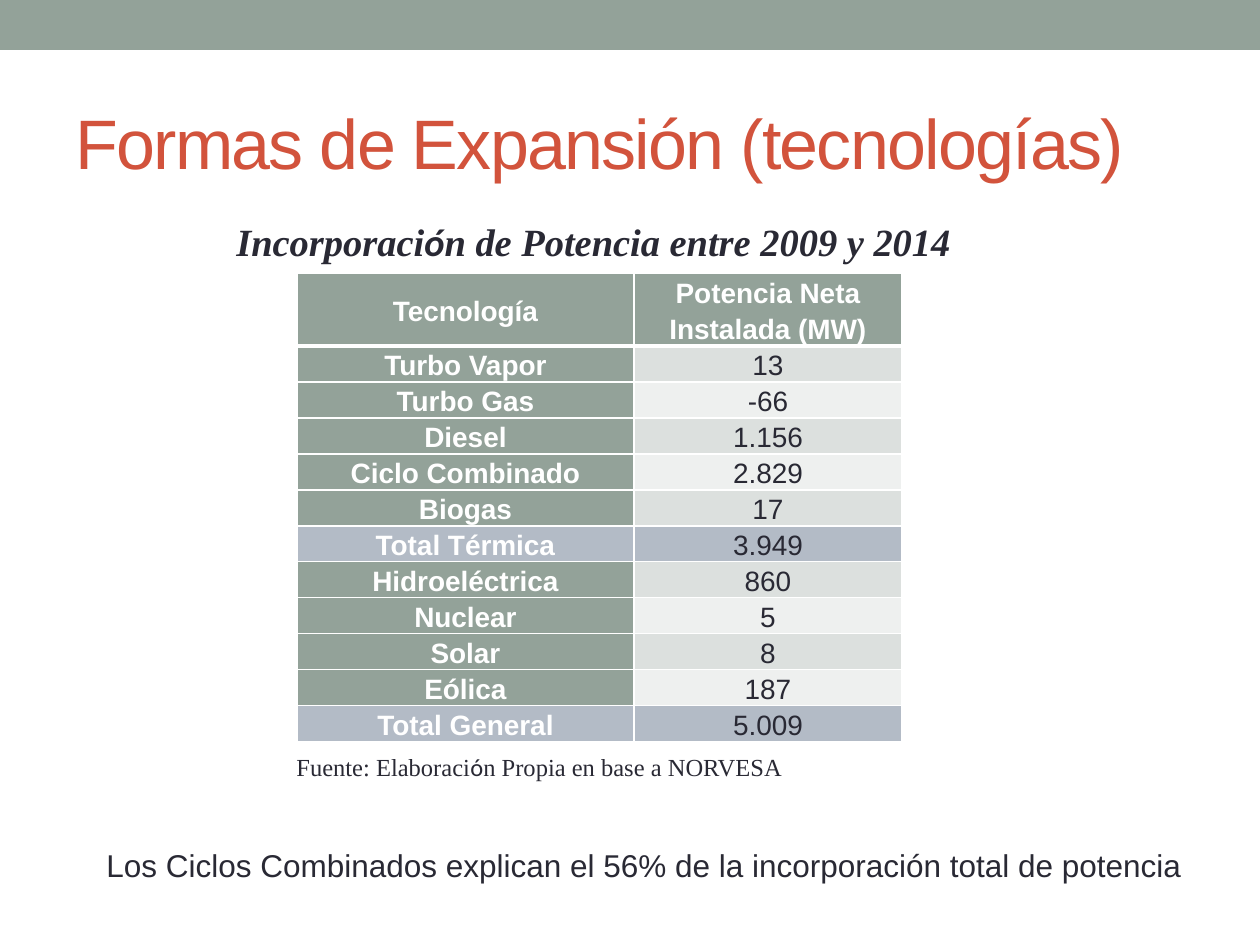
from lxml import etree
from pptx import Presentation
from pptx import util as u
from pptx.dml.color import RGBColor
from pptx.enum import shapes, text
from pptx.oxml import ns

PX = 914400 / 126
SAGE, MIST, INK, WHITE = "93A299", "B3BBC6", "292934", "FFFFFF"
BANDS = ["DCE0DE", "EEF0EF"]
ROWS = [
    ("Tecnología", "Potencia Neta Instalada (MW)"),
    ("Turbo Vapor", "13"),
    ("Turbo Gas", "-66"),
    ("Diesel", "1.156"),
    ("Ciclo Combinado", "2.829"),
    ("Biogas", "17"),
    ("Total Térmica", "3.949"),
    ("Hidroeléctrica", "860"),
    ("Nuclear", "5"),
    ("Solar", "8"),
    ("Eólica", "187"),
    ("Total General", "5.009"),
]
# left, top, width, height, size, bold italic, first indent, (words, font) runs
SERIF, SANS = "Times New Roman", "Arial"
NOTES = [
    (108, 212, 866, 59, 22, True, 116,
     [("Incorporaci", SERIF), ("ó", "Calibri"),
      ("n de Potencia entre 2009 y 2014", SERIF)]),
    (284, 746, 588, 43, 14, False, 0,
     [("Fuente: Elaboraci", SERIF), ("ó", "Calibri"),
      ("n Propia en base a NORVESA", SERIF)]),
    (94, 840, 1113, 50, 18, False, 0,
     [("Los Ciclos Combinados explican el 56% de la incorporación total de potencia", SANS)]),
]


def box(*sides):
    return [round(n * PX) for n in sides]


def style(font, name, size, color, bold=False):
    font.name, font.size, font.bold = name, u.Pt(size), bold
    font.color.rgb = RGBColor.from_string(color)


deck = Presentation()
deck.slide_width, deck.slide_height = box(1260, 945)
slide = deck.slides.add_slide(deck.slide_layouts[5])

# Top band
band = slide.shapes.add_shape(shapes.MSO_SHAPE.RECTANGLE, *box(0, 0, 1260, 50))
band.shadow.inherit = False
band.fill.solid()
band.fill.fore_color.rgb = RGBColor.from_string(SAGE)
band.line.fill.background()

# Title
title = slide.shapes.title
title.left, title.top, title.width, title.height = box(63, 73, 1134, 136)
frame = title.text_frame
frame.text = "Formas de Expansión (tecnologías)"
frame.vertical_anchor = text.MSO_ANCHOR.MIDDLE
para = frame.paragraphs[0]
para.alignment = text.PP_ALIGN.LEFT
style(para.runs[0].font, SANS, 40, "D2533C")
para.runs[0].font._element.set("spc", "-100")

# Table of added power
table = slide.shapes.add_table(len(ROWS), 2, *box(297, 273, 605, 469)).table
for col, width in zip(table.columns, box(337, 268)):
    col.width = width
for r, row in enumerate(ROWS):
    table.rows[r].height = box(36 if r else 73)[0]
    total = row[0].startswith("Total")
    for c, words in enumerate(row):
        cell = table.cell(r, c)
        cell.margin_left = cell.margin_right = u.Inches(0.07)
        cell.margin_top = cell.margin_bottom = 0
        cell.vertical_anchor = text.MSO_ANCHOR.MIDDLE
        cell.text_frame.text = words
        para = cell.text_frame.paragraphs[0]
        para.alignment, para.line_spacing = text.PP_ALIGN.CENTER, 1.15
        head = r == 0 or c == 0
        style(para.runs[0].font, SANS, 16, WHITE if head else INK, head)

        # Borders come before the fill in the cell's XML
        props = cell._tc.get_or_add_tcPr()
        for side in "LRTB":
            thick = (r, side) in [(0, "B"), (1, "T")]
            line = etree.SubElement(props, ns.qn("a:ln" + side),
                                    w=str(u.Pt(3 if thick else 1)))
            solid = etree.SubElement(line, ns.qn("a:solidFill"))
            etree.SubElement(solid, ns.qn("a:srgbClr"), val=WHITE)
        cell.fill.solid()
        color = MIST if total else SAGE if head else BANDS[(r - 1) % 2]
        cell.fill.fore_color.rgb = RGBColor.from_string(color)

# Caption, source and remark
for left, top, width, height, size, strong, indent, parts in NOTES:
    note = slide.shapes.add_textbox(*box(left, top, width, height))
    frame = note.text_frame
    frame.word_wrap = True
    para = frame.paragraphs[0]
    if strong:
        frame.vertical_anchor = text.MSO_ANCHOR.MIDDLE
    if indent:
        para._p.get_or_add_pPr().set("indent", str(box(indent)[0]))
    for words, name in parts:
        run = para.add_run()
        run.text = words
        style(run.font, name, size, INK, strong)
        run.font.italic = strong

deck.save("out.pptx")
